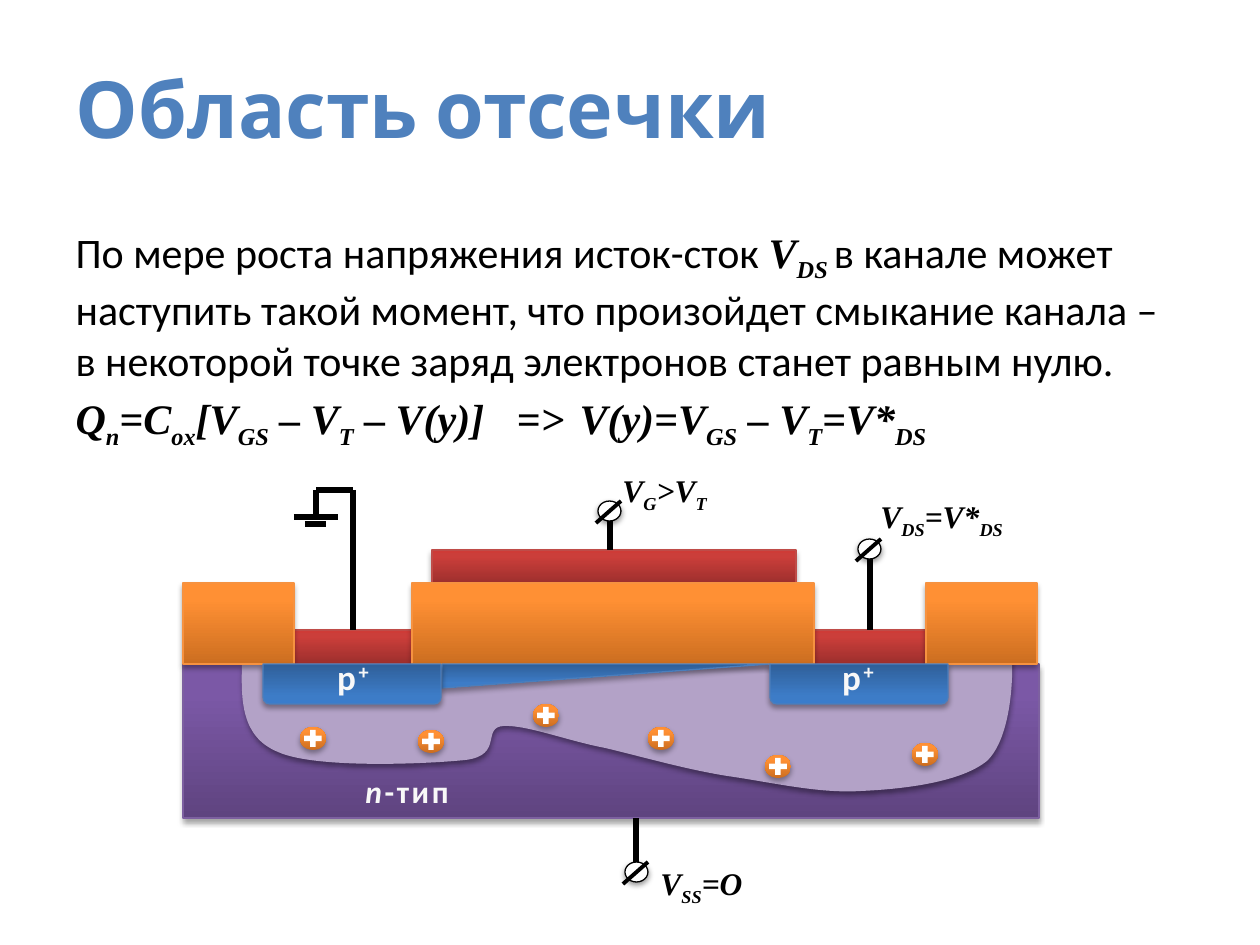
"""Build a slide on the cut-off region of a MOS transistor."""
from copy import deepcopy

from lxml import etree
from pptx import Presentation
from pptx.dml.color import RGBColor
from pptx.enum.shapes import MSO_CONNECTOR, MSO_SHAPE
from pptx.enum.text import MSO_ANCHOR, PP_ALIGN
from pptx.oxml.ns import qn
from pptx.util import Emu, Pt

SCALE = 914400 / 126
STRAIGHT = MSO_CONNECTOR.STRAIGHT
RECTANGLE, ELLIPSE = MSO_SHAPE.RECTANGLE, MSO_SHAPE.OVAL
TRIANGLE, WELL = MSO_SHAPE.RIGHT_TRIANGLE, MSO_SHAPE.ROUND_2_SAME_RECTANGLE
PLUS = MSO_SHAPE.MATH_PLUS
MIDDLE = MSO_ANCHOR.MIDDLE
LEFT, CENTER = PP_ALIGN.LEFT, PP_ALIGN.CENTER
TOP_SITE, BOTTOM_SITE = 0, 2

COLORS = {
    "title": "4F81BD", "black": "000000", "white": "FFFFFF",
    "light": "F8F8F8", "depletion": "B3A2C7",
    "substrate line": "7D60A0", "metal line": "BF4C48",
    "oxide line": "F69240", "doped line": "4B7EBC",
}
GRADIENTS = {
    "substrate": ("5F4480", "7B58A6", "7C57A8"),
    "metal": ("9C2F2D", "CB3E3A", "CE3B37"),
    "oxide": ("CC6E20", "FF9034", "FF9136"),
    "doped": ("2F5F99", "3D7CC7", "3A7CCB"),
}
GRADIENT_POSITIONS = (0, 0.8, 1)

FORMATS = {
    "title": {"name": "Cabin", "size": Pt(45), "bold": True},
    "body": {"name": "Calibri", "size": Pt(24), "bold": False},
    "formula": {"name": "Times New Roman", "size": Pt(24), "bold": True, "italic": True},
    "label": {"name": "Times New Roman", "size": Pt(18), "bold": True, "italic": True},
    "type": {"name": "Calibri", "size": Pt(18), "bold": True, "italic": True},
    "suffix": {"name": "Calibri", "size": Pt(18), "bold": True, "italic": False},
    "doping": {"name": "Calibri", "size": Pt(20), "bold": True},
}

DEPLETION_START = (242, 664)
DEPLETION_CURVE = [
    (241, 700), (241, 737), (278, 752), (315, 769), (428, 764), (466, 760),
    (504, 755), (481, 727), (504, 726), (527, 725), (568, 741), (605, 748),
    (643, 757), (684, 769), (727, 776), (770, 782), (819, 794), (862, 791),
    (906, 789), (961, 782), (987, 761), (1011, 738), (1013, 679), (1012, 660),
    (1011, 640), (980, 640), (980, 640),
]
HOLES = [(648, 727), (765, 755), (912, 743), (300, 727), (418, 730), (533, 704)]
GROUND = [(353, 490, 316, 490), (316, 490, 316, 517),
          (294, 517, 338, 517), (305, 524, 326, 524)]


def px(*lengths):
    """Turn pixel lengths into EMU."""
    return [Emu(round(length * SCALE)) for length in lengths]


def rgb(name):
    """Return the named colour."""
    return RGBColor.from_string(COLORS[name])


def place(shape, box):
    """Give a shape its left, top, width and height."""
    for name, value in zip(("left", "top", "width", "height"), px(*box)):
        setattr(shape, name, value)


def add_shadow(shape, opacity, distance):
    """Give a shape a soft shadow that falls straight down."""
    shape.shadow.inherit = False
    effects = shape._element.spPr.find(qn("a:effectLst"))
    shadow = etree.SubElement(effects, qn("a:outerShdw"), blurRad=str(Pt(3.1)),
                              dist=str(Pt(distance)), dir="5400000", rotWithShape="0")
    color = etree.SubElement(shadow, qn("a:srgbClr"), val=COLORS["black"])
    etree.SubElement(color, qn("a:alpha"), val=str(opacity * 1000))


def fill_gradient(shape, material):
    """Fill a shape with the three-stop gradient of a material."""
    shape.fill.gradient()
    shape.fill.gradient_angle = 90
    stop_list = shape._element.spPr.find(".//" + qn("a:gsLst"))
    stop_list.append(deepcopy(stop_list[-1]))
    stops = zip(shape.fill.gradient_stops, GRADIENT_POSITIONS, GRADIENTS[material])
    for stop, position, color in stops:
        stop.position = position
        stop.color.rgb = RGBColor.from_string(color)


def add_region(slide, material, box, kind=RECTANGLE, rotation=0):
    """Add one shaded part of the transistor."""
    shape = slide.shapes.add_shape(kind, *px(*box))
    shape.rotation = rotation
    fill_gradient(shape, material)
    shape.line.color.rgb = rgb(material + " line")
    shape.line.width = Pt(0.75)
    add_shadow(shape, 35, 1.8)
    return shape


def add_depletion(slide):
    """Add the depletion layer as an outline of Bezier curves."""
    builder = slide.shapes.build_freeform(*DEPLETION_START, scale=SCALE)
    builder.add_line_segments(DEPLETION_CURVE, close=True)
    shape = builder.convert_to_shape()
    lines = list(shape._element.iter(qn("a:lnTo")))
    for first in range(0, len(lines), 3):
        curve = etree.Element(qn("a:cubicBezTo"))
        lines[first].addprevious(curve)
        for line in lines[first:first + 3]:
            curve.append(line[0])
            line.getparent().remove(line)
    shape.fill.solid()
    shape.fill.fore_color.rgb = rgb("depletion")
    shape.line.fill.background()
    add_shadow(shape, 38, 1.6)


def add_wire(slide, ends, width=3):
    """Add a straight black line."""
    wire = slide.shapes.add_connector(STRAIGHT, *px(*ends))
    wire.line.color.rgb = rgb("black")
    wire.line.width = Pt(width)
    etree.SubElement(wire._element.spPr, qn("a:effectLst"))
    return wire


def add_terminal(slide, left, top):
    """Add a crossed circle."""
    circle = slide.shapes.add_shape(ELLIPSE, *px(left, top, 23, 20))
    circle.fill.solid()
    circle.fill.fore_color.rgb = rgb("white")
    circle.line.color.rgb = rgb("black")
    circle.line.width = Pt(0.75)
    add_shadow(circle, 38, 1.6)
    add_wire(slide, (left - 2, top + 22, left + 23, top), 2.25)


def add_hole(slide, left, top):
    """Add a positive charge carrier as a group."""
    group = slide.shapes.add_group_shape()
    ball = group.shapes.add_shape(ELLIPSE, *px(left, top, 26, 23))
    fill_gradient(ball, "oxide")
    add_shadow(ball, 35, 1.8)
    plus = group.shapes.add_shape(PLUS, *px(left + 1, top, 24, 23))
    plus.fill.solid()
    plus.fill.fore_color.rgb = rgb("white")
    plus.shadow.inherit = False
    for shape in (ball, plus):
        shape.line.fill.background()


def write(paragraph, pieces, color="black", alignment=LEFT, spacing=0):
    """Write runs given as text, format name and baseline percentage."""
    paragraph.alignment = alignment
    for text, format_name, baseline in pieces:
        run = paragraph.add_run()
        run.text = text
        for name, value in FORMATS[format_name].items():
            setattr(run.font, name, value)
        run.font.color.rgb = rgb(color)
        properties = run._r.get_or_add_rPr()
        for name, value in (("baseline", baseline * 1000), ("spc", spacing)):
            if value:
                properties.set(name, str(value))


def indexed(format_name, *parts):
    """Make every second part a subscript."""
    return [(part, format_name, -25 * (index % 2)) for index, part in enumerate(parts)]


def add_label(slide, box, pieces, **style):
    """Add a text box with one line."""
    frame = slide.shapes.add_textbox(*px(*box)).text_frame
    frame.word_wrap = True
    write(frame.paragraphs[0], pieces, **style)


def fill_placeholders(slide):
    """Write the title and the two body paragraphs."""
    title, body = slide.placeholders
    place(title, (63, 21, 1134, 173))
    title.text_frame.vertical_anchor = MIDDLE
    write(title.text_frame.paragraphs[0], [("Область отсечки", "title", 0)], "title")
    place(body, (63, 220, 1134, 624))
    statement = [
        ("По мере роста напряжения исток-сток ", "body", 0),
        *indexed("formula", "V", "DS "),
        ("в канале может наступить такой момент, что произойдет смыкание канала – "
         "в некоторой точке заряд электронов станет равным нулю.", "body", 0),
    ]
    equation = indexed("formula", "Q", "n", "=C", "ox", "[V", "GS", " – V", "T",
                       " – V(y)] \t=>\tV(y)=V", "GS", " – V", "T", "=V*", "DS")
    frame = body.text_frame
    for paragraph, pieces in ((frame.paragraphs[0], statement),
                              (frame.add_paragraph(), equation)):
        write(paragraph, pieces)
        properties = paragraph._p.get_or_add_pPr()
        properties.set("marL", "0")
        properties.set("indent", "0")
        etree.SubElement(properties, qn("a:buNone"))


def draw_transistor(slide):
    """Draw the layers, wires, terminals and charge carriers."""
    substrate_box = (183, 664, 856, 154)
    add_region(slide, "substrate", substrate_box)
    add_depletion(slide)
    source, drain, _ = [add_region(slide, "metal", (left, top, width, 34)) for left, top, width
                        in ((294, 630, 118), (814, 630, 112), (432, 550, 364))]
    for left, width in ((183, 111), (926, 111), (412, 402)):
        add_region(slide, "oxide", (left, 583, width, 81))
    add_wire(slide, (353, 490, 353, 630)).end_connect(source, TOP_SITE)
    add_wire(slide, (870, 551, 870, 630)).end_connect(drain, TOP_SITE)
    for ends in [(610, 515, 610, 550), (636, 818, 636, 876)] + GROUND:
        add_wire(slide, ends)
    for left, top in ((598, 501), (858, 539), (625, 862)):
        add_terminal(slide, left, top)
    channel = add_region(slide, "doped", (442, 664, 328, 24), TRIANGLE, 180)
    channel._element.spPr.find(qn("a:xfrm")).set("flipH", "1")
    for left in (770, 263):
        add_region(slide, "doped", (left, 664, 178, 40), WELL, 180)
    for left, top in HOLES:
        add_hole(slide, left, top)


def add_labels(slide):
    """Name the voltages and the doped regions."""
    add_label(slide, (353, 766, 149, 34), [("n", "type", 0), ("-тип", "suffix", 0)],
              color="light", spacing=150)
    for left in (799, 294):
        add_label(slide, (left, 649, 118, 55), [("p", "doping", 0), ("+", "doping", 30)],
                  color="light", alignment=CENTER, spacing=150)
    for box, parts in (((610, 465, 121, 50), ("V", "G", ">V", "T")),
                       ((868, 491, 160, 50), ("V", "DS", "=V*", "DS")),
                       ((648, 858, 122, 50), ("V", "SS", "=O"))):
        add_label(slide, box, indexed("label", *parts))


def main():
    """Build and save the presentation."""
    presentation = Presentation()
    presentation.slide_width, presentation.slide_height = px(1260, 945)
    slide = presentation.slides.add_slide(presentation.slide_layouts[1])
    fill_placeholders(slide)
    draw_transistor(slide)
    add_labels(slide)
    presentation.save("out.pptx")


if __name__ == "__main__":
    main()
